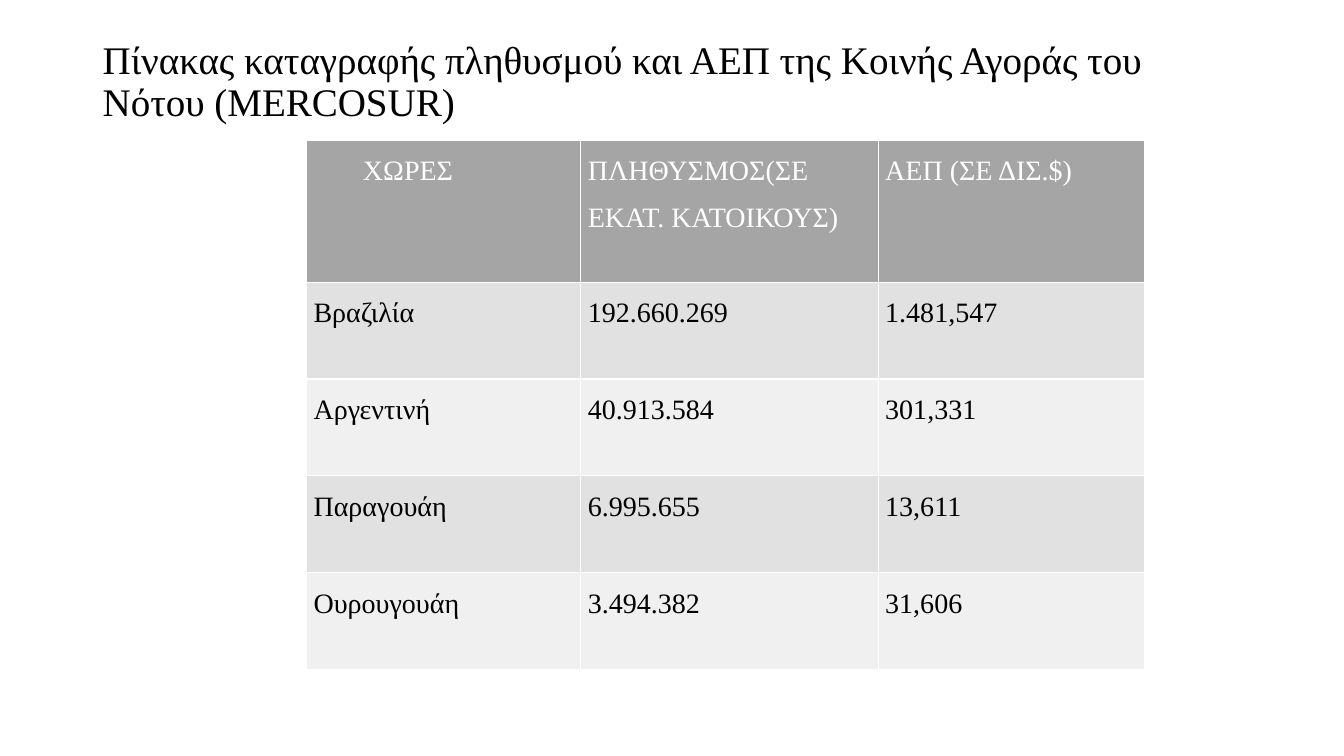
from lxml import etree
from pptx import Presentation
from pptx.dml.color import RGBColor
from pptx.enum import text
from pptx.oxml import ns
from pptx.util import Inches, Pt

COLORS = {"black": "000000", "white": "FFFFFF", "header": "A5A5A5",
          "odd": "E1E1E1", "even": "F0F0F0"}
TITLE = "Πίνακας καταγραφής πληθυσμού και ΑΕΠ της Κοινής Αγοράς του Νότου (MERCOSUR)"
ROWS = [
    ("ΧΩΡΕΣ", "ΠΛΗΘΥΣΜΟΣ(ΣΕ ΕΚΑΤ. ΚΑΤΟΙΚΟΥΣ)", "ΑΕΠ (ΣΕ ΔΙΣ.$)"),
    ("Βραζιλία", "192.660.269", "1.481,547"),
    ("Αργεντινή", "40.913.584", "301,331"),
    ("Παραγουάη", "6.995.655", "13,611"),
    ("Ουρουγουάη", "3.494.382", "31,606"),
]
COL_WIDTHS = [2.72, 2.95, 2.64]
HEADER_HEIGHT, ROW_HEIGHT = 1.41, 0.96


def write(tf, content, size, color, spacing):
    tf.text = content
    p = tf.paragraphs[0]
    p.line_spacing = spacing
    font = p.runs[0].font
    font.name = "Times New Roman"
    font.size = Pt(size)
    font.color.rgb = RGBColor.from_string(COLORS[color])
    return p


def add_borders(cell):
    """Draw a thin white line on each side, placed before the cell fill."""
    tcPr = cell._tc.get_or_add_tcPr()
    for i, side in enumerate(("lnL", "lnR", "lnT", "lnB")):
        ln = etree.Element(ns.qn(f"a:{side}"), w=str(Pt(1)))
        fill = etree.SubElement(ln, ns.qn("a:solidFill"))
        etree.SubElement(fill, ns.qn("a:srgbClr"), val=COLORS["white"])
        tcPr.insert(i, ln)


prs = Presentation()
prs.slide_width, prs.slide_height = Inches(13.33), Inches(7.5)
s = prs.slides.add_slide(prs.slide_layouts[6])

title = s.shapes.add_textbox(Inches(0.92), Inches(0.4), Inches(11.5), Inches(0.9))
tf = title.text_frame
tf.word_wrap = True
tf.vertical_anchor = text.MSO_ANCHOR.TOP
tf.margin_top = tf.margin_bottom = 0
write(tf, TITLE, 27.9, "black", 0.9)

table = s.shapes.add_table(
    len(ROWS), len(COL_WIDTHS), Inches(3.04), Inches(1.39), Inches(sum(COL_WIDTHS)),
    Inches(HEADER_HEIGHT + ROW_HEIGHT * (len(ROWS) - 1))).table
for column, width in zip(table.columns, COL_WIDTHS):
    column.width = Inches(width)

for i, values in enumerate(ROWS):
    table.rows[i].height = Inches(ROW_HEIGHT if i else HEADER_HEIGHT)
    band = "header" if i == 0 else "odd" if i % 2 else "even"
    for j, value in enumerate(values):
        cell = table.cell(i, j)
        cell.margin_left = cell.margin_right = Inches(0.07)
        cell.margin_top = cell.margin_bottom = 0
        cell.fill.solid()
        cell.fill.fore_color.rgb = RGBColor.from_string(COLORS[band])
        add_borders(cell)
        p = write(cell.text_frame, value, 20, "black" if i else "white", 1.5)
        p.runs[0].font.bold = False

# The first heading is set in from the left
table.cell(0, 0).text_frame.paragraphs[0]._p.get_or_add_pPr().set("marL", str(Inches(0.49)))

prs.save("out.pptx")
